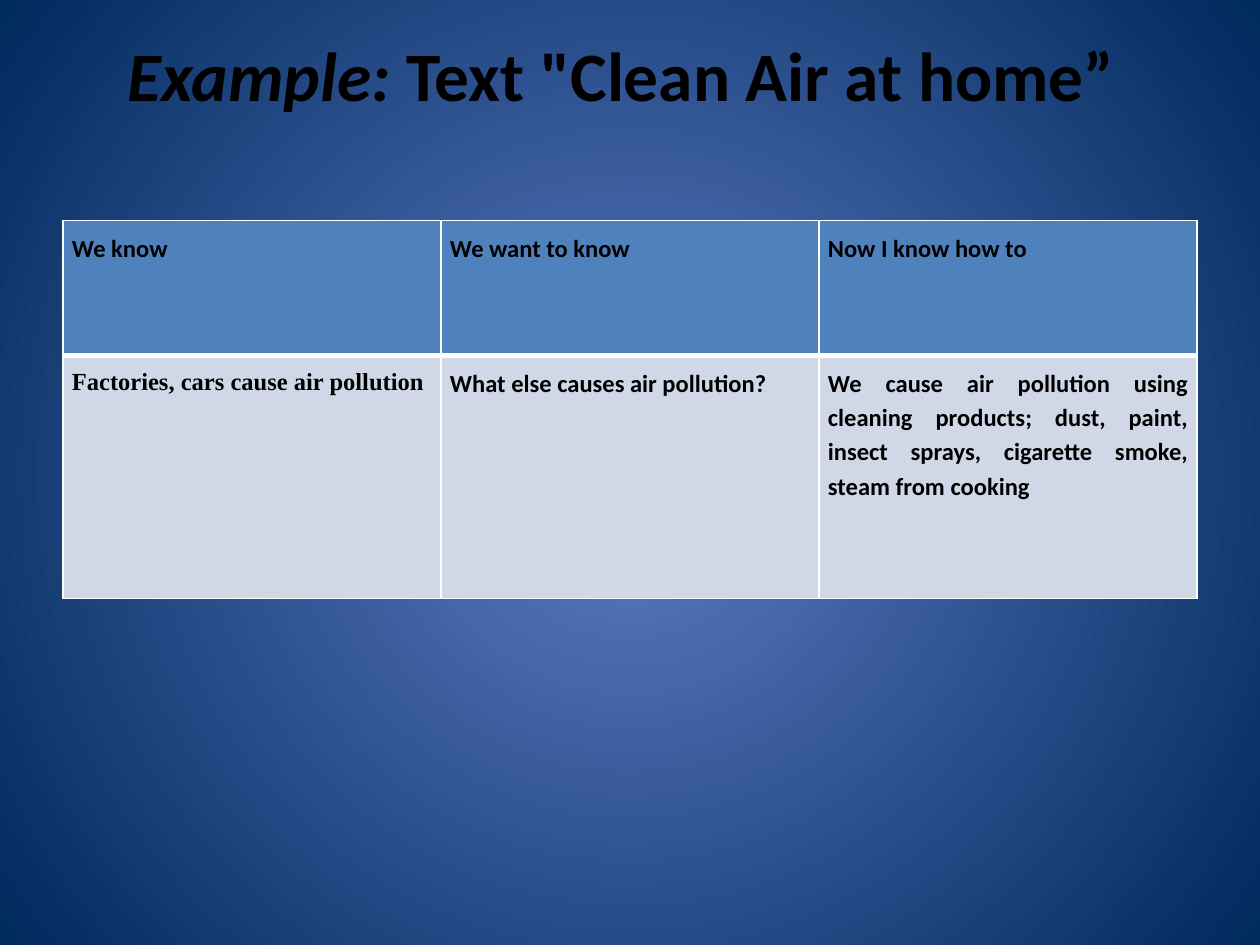
import pptx
import pptx.dml.color
import pptx.enum.text
import pptx.oxml
import pptx.oxml.ns
import pptx.util

Cm = pptx.util.Cm
Pt = pptx.util.Pt
RGBColor = pptx.dml.color.RGBColor
Align = pptx.enum.text.PP_ALIGN
qn = pptx.oxml.ns.qn

BLACK = RGBColor(0x00, 0x00, 0x00)
WHITE = RGBColor(0xFF, 0xFF, 0xFF)
HEADER_BLUE = RGBColor(0x4F, 0x81, 0xBD)
BODY_BLUE = RGBColor(0xD0, 0xD8, 0xE8)
GLOW_BLUE = RGBColor(0x5E, 0x7C, 0xC5)
DEEP_BLUE = RGBColor(0x00, 0x29, 0x5C)

BODY_FONT = "Calibri"
SERIF_FONT = "Times New Roman"

HEADINGS = ["We know", "We want to know", "Now I know how to"]
ANSWERS = [
    "Factories, cars cause air pollution",
    "What else causes air pollution?",
    "We cause air pollution using cleaning products; dust, paint, "
    "insect sprays, cigarette smoke, steam from cooking",
]


class SlideBuilder:
    """Holds the text style and the current slide."""

    def __init__(self, page):
        self.page = page
        self.color = BLACK
        self.title_size = Pt(39.6)
        self.cell_size = Pt(14)
        self.cell_inset = Cm(0.18)

    def style(self, paragraph, size, font=BODY_FONT):
        paragraph.font.name = font
        paragraph.font.size = size
        paragraph.font.bold = True
        paragraph.font.color.rgb = self.color

    def background(self, center, edge):
        fill = self.page.background.fill
        fill.gradient()
        for stop, color, position in zip(fill.gradient_stops, (center, edge), (0, 1)):
            stop.color.rgb = color
            stop.position = position
        # Turn the linear gradient into a circular one
        gradient = self.page.element.find(".//" + qn("a:gradFill"))
        gradient.remove(gradient.find(qn("a:lin")))
        gradient.append(pptx.oxml.parse_xml(
            f'<a:path {pptx.oxml.ns.nsdecls("a")} path="circle">'
            '<a:fillToRect l="50000" t="50000" r="50000" b="50000"/></a:path>'))

    def title(self, lead, rest):
        box = self.page.shapes.add_textbox(Cm(1.27), Cm(0.65), Cm(22.86), Cm(3.18))
        frame = box.text_frame
        frame.word_wrap = True
        frame.margin_top = frame.margin_bottom = 0
        frame.margin_left, frame.margin_right = Cm(0.25), Cm(0.61)
        para = frame.paragraphs[0]
        para.alignment = Align.CENTER
        self.style(para, self.title_size)
        span = para.add_run()
        span.text = lead
        span.font.italic = True
        para.add_run().text = rest

    def table(self, rows, heights):
        frame = self.page.shapes.add_table(
            len(rows), len(rows[0]), Cm(1.27), Cm(4.45), Cm(22.86), sum(heights))
        grid = frame.table
        for row, height in zip(grid.rows, heights):
            row.height = height
        for row_index, texts in enumerate(rows):
            is_header = row_index == 0
            for column_index, text in enumerate(texts):
                cell = grid.cell(row_index, column_index)
                font = BODY_FONT if is_header or column_index else SERIF_FONT
                self.cell(cell, text, font, HEADER_BLUE if is_header else BODY_BLUE)
                self.borders(cell, top=1 if is_header else 3, bottom=3 if is_header else 1)

    def cell(self, cell, text, font, color):
        cell.fill.solid()
        cell.fill.fore_color.rgb = color
        cell.margin_left = cell.margin_right = self.cell_inset
        cell.margin_top = cell.margin_bottom = self.cell_inset
        para = cell.text_frame.paragraphs[0]
        para.text = text
        para.alignment = Align.JUSTIFY
        para.line_spacing = 1.15
        self.style(para, self.cell_size, font)

    def borders(self, cell, top, bottom):
        properties = cell._tc.get_or_add_tcPr()
        widths = {"lnL": 1, "lnR": 1, "lnT": top, "lnB": bottom}
        for index, (side, width) in enumerate(widths.items()):
            properties.insert(index, pptx.oxml.parse_xml(
                f'<a:{side} {pptx.oxml.ns.nsdecls("a")} w="{Pt(width)}">'
                f'<a:solidFill><a:srgbClr val="{WHITE}"/></a:solidFill></a:{side}>'))


def main():
    deck = pptx.Presentation()
    deck.slide_width, deck.slide_height = Cm(25.4), Cm(19.05)
    builder = SlideBuilder(deck.slides.add_slide(deck.slide_layouts[6]))

    # Background and title
    builder.background(GLOW_BLUE, DEEP_BLUE)
    builder.title("Example:", ' Text "Clean Air at home”')

    # Know / want to know / learned table
    builder.table([HEADINGS, ANSWERS], [Cm(2.72), Cm(4.9)])

    deck.save("out.pptx")


if __name__ == "__main__":
    main()
